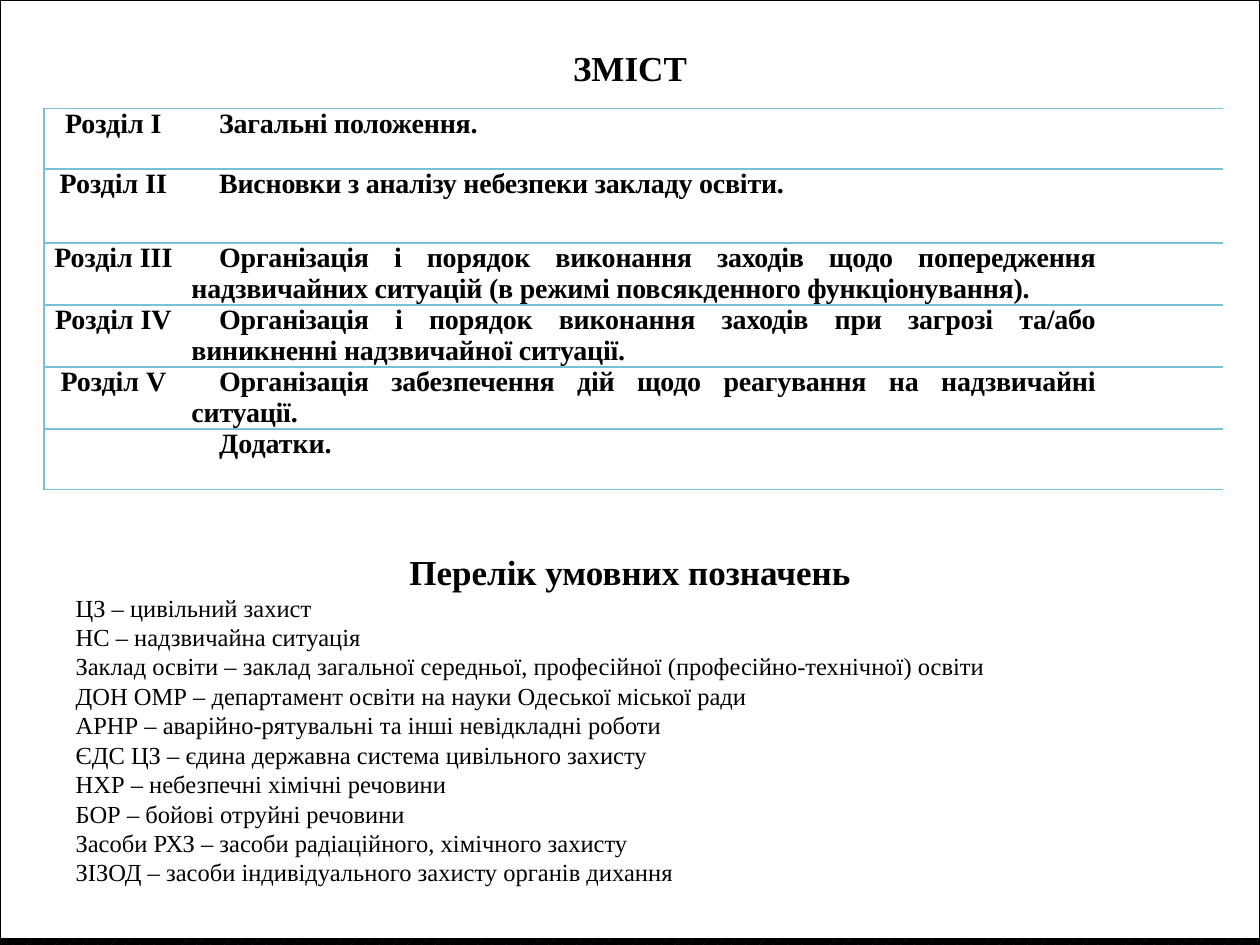
"""Build the contents slide with its list of abbreviations."""
from dataclasses import dataclass
from typing import NamedTuple

from lxml.etree import SubElement
from pptx import Presentation
from pptx.dml.color import RGBColor
from pptx.enum.dml import MSO_PATTERN
from pptx.enum.shapes import MSO_SHAPE
from pptx.enum.text import MSO_ANCHOR, MSO_AUTO_SIZE, PP_ALIGN
from pptx.oxml.ns import qn
from pptx.util import Inches, Pt


@dataclass(frozen=True)
class Theme:
    font: str = "Times New Roman"
    ink: RGBColor = RGBColor(0, 0, 0)
    paper: RGBColor = RGBColor(255, 255, 255)
    pattern: RGBColor = RGBColor(0x24, 0x26, 0x3C)
    rule: str = "78C0D4"
    rule_width: float = 1
    heading: float = 20
    heading_pitch: float = 24
    section: float = 16
    section_pitch: float = 17.7
    term: float = 14
    term_pitch: float = 16.8


class Section(NamedTuple):
    label: str
    title: str
    height: float = 0.48
    tracking: float = -0.1


class Term(NamedTuple):
    name: str
    meaning: str


THEME = Theme()
COLUMNS = (1.1, 7.32, 0.94)
SECTIONS = (
    Section("Розділ І", "Загальні положення."),
    Section("Розділ ІІ", "Висновки з аналізу небезпеки закладу освіти.", 0.59),
    Section("Розділ ІІІ", "Організація і порядок виконання заходів щодо попередження "
            "надзвичайних ситуацій (в режимі повсякденного функціонування)."),
    Section("Розділ ІV", "Організація і порядок виконання заходів при загрозі та/або "
            "виникненні надзвичайної ситуації."),
    Section("Розділ V", "Організація забезпечення дій щодо реагування на надзвичайні ситуації."),
    Section("", "Додатки.", tracking=0),
)
TERMS = (
    Term("ЦЗ", "цивільний захист"),
    Term("НС", "надзвичайна ситуація"),
    Term("Заклад освіти", "заклад загальної середньої, професійної (професійно-технічної) освіти"),
    Term("ДОН ОМР", "департамент освіти на науки Одеської міської ради"),
    Term("АРНР", "аварійно-рятувальні та інші невідкладні роботи"),
    Term("ЄДС ЦЗ", "єдина державна система цивільного захисту"),
    Term("НХР", "небезпечні хімічні речовини"),
    Term("БОР", "бойові отруйні речовини"),
    Term("Засоби РХЗ", "засоби радіаційного, хімічного захисту"),
    Term("ЗІЗОД", "засоби індивідуального захисту органів дихання"),
)


def write(para, text: str, size: float, pitch: float, align=PP_ALIGN.LEFT,
          bold: bool = True, indent: float = 0, tracking: float = 0) -> None:
    """Fill a paragraph with one formatted run."""
    para.alignment = align
    para.line_spacing = Pt(pitch)
    para.space_before = para.space_after = Pt(0)
    properties = para._p.get_or_add_pPr()
    properties.set("marL", "0")
    properties.set("indent", str(Inches(indent)))
    SubElement(properties, qn("a:buNone"))
    span = para.add_run()
    span.text = text
    span.font.name = THEME.font
    span.font.size = Pt(size)
    span.font.bold = bold
    span.font.color.rgb = THEME.ink
    if tracking:
        span._r.get_or_add_rPr().set("spc", str(round(tracking * 100)))


def place(box, top: float, height: float) -> None:
    """Stretch a placeholder across the slide at the given height."""
    box.left, box.top = Inches(0), Inches(top)
    box.width, box.height = Inches(10), Inches(height)
    frame = box.text_frame
    frame.word_wrap = True
    frame.auto_size = MSO_AUTO_SIZE.NONE
    frame.vertical_anchor = MSO_ANCHOR.TOP
    frame.margin_left = frame.margin_right = Inches(0.1)
    frame.margin_top = frame.margin_bottom = 0


def style_cell(cell, ruled_left: bool, side_margin: float) -> None:
    """Set the margins, rules and fill of a table cell."""
    cell.margin_left = cell.margin_right = Inches(side_margin)
    cell.margin_top = cell.margin_bottom = 0
    properties = cell._tc.get_or_add_tcPr()
    for side, ruled in (("L", ruled_left), ("R", False), ("T", True), ("B", True)):
        line = SubElement(properties, qn(f"a:ln{side}"), w=str(Pt(THEME.rule_width)))
        if ruled:
            fill = SubElement(line, qn("a:solidFill"))
            SubElement(fill, qn("a:srgbClr"), val=THEME.rule)
        else:
            SubElement(line, qn("a:noFill"))
    cell.fill.solid()
    cell.fill.fore_color.rgb = THEME.paper


def add_sections(page) -> None:
    """Add the table of sections."""
    height = sum(section.height for section in SECTIONS)
    table = page.shapes.add_table(len(SECTIONS), len(COLUMNS), Inches(0.35), Inches(0.86),
                                  Inches(sum(COLUMNS)), Inches(height)).table
    table.first_row = table.horz_banding = False
    for column, width in zip(table.columns, COLUMNS):
        column.width = Inches(width)
    for row, section in zip(table.rows, SECTIONS):
        row.height = Inches(section.height)
        label, title, spare = row.cells
        style_cell(label, True, 0.05)
        style_cell(title, False, 0.07)
        style_cell(spare, False, 0.07)
        if section.label:
            write(label.text_frame.paragraphs[0], section.label, THEME.section,
                  THEME.section_pitch, PP_ALIGN.CENTER)
        write(title.text_frame.paragraphs[0], section.title, THEME.section,
              THEME.section_pitch, PP_ALIGN.JUSTIFY, indent=0.22, tracking=section.tracking)


def add_panel(page) -> None:
    """Add the white sheet behind everything else."""
    panel = page.shapes.add_shape(MSO_SHAPE.RECTANGLE, 0, 0, Inches(10), Inches(7.45))
    panel.shadow.inherit = False
    panel.fill.solid()
    panel.fill.fore_color.rgb = THEME.paper
    panel.line.color.rgb = THEME.ink
    panel.line.width = Pt(0.75)
    page.shapes.title.element.addprevious(panel.element)


def main() -> None:
    """Build and save the deck."""
    deck = Presentation()
    deck.slide_width, deck.slide_height = Inches(10), Inches(7.5)
    page = deck.slides.add_slide(deck.slide_layouts[1])
    backdrop = page.background.fill
    backdrop.patterned()
    backdrop.pattern = MSO_PATTERN.PERCENT_10
    backdrop.fore_color.rgb = THEME.pattern
    backdrop.back_color.rgb = THEME.ink
    add_panel(page)

    title, body = page.shapes.title, page.placeholders[1]
    place(title, 0.37, 0.4)
    write(title.text_frame.paragraphs[0], "ЗМІСТ", THEME.heading,
          THEME.heading_pitch, PP_ALIGN.CENTER)
    place(body, 4.37, 2.8)
    write(body.text_frame.paragraphs[0], "Перелік умовних позначень", THEME.heading,
          THEME.heading_pitch, PP_ALIGN.CENTER)
    for term in TERMS:
        write(body.text_frame.add_paragraph(), f"{term.name} – {term.meaning}", THEME.term,
              THEME.term_pitch, bold=False, indent=0.5)
    add_sections(page)
    deck.save("out.pptx")


if __name__ == "__main__":
    main()
